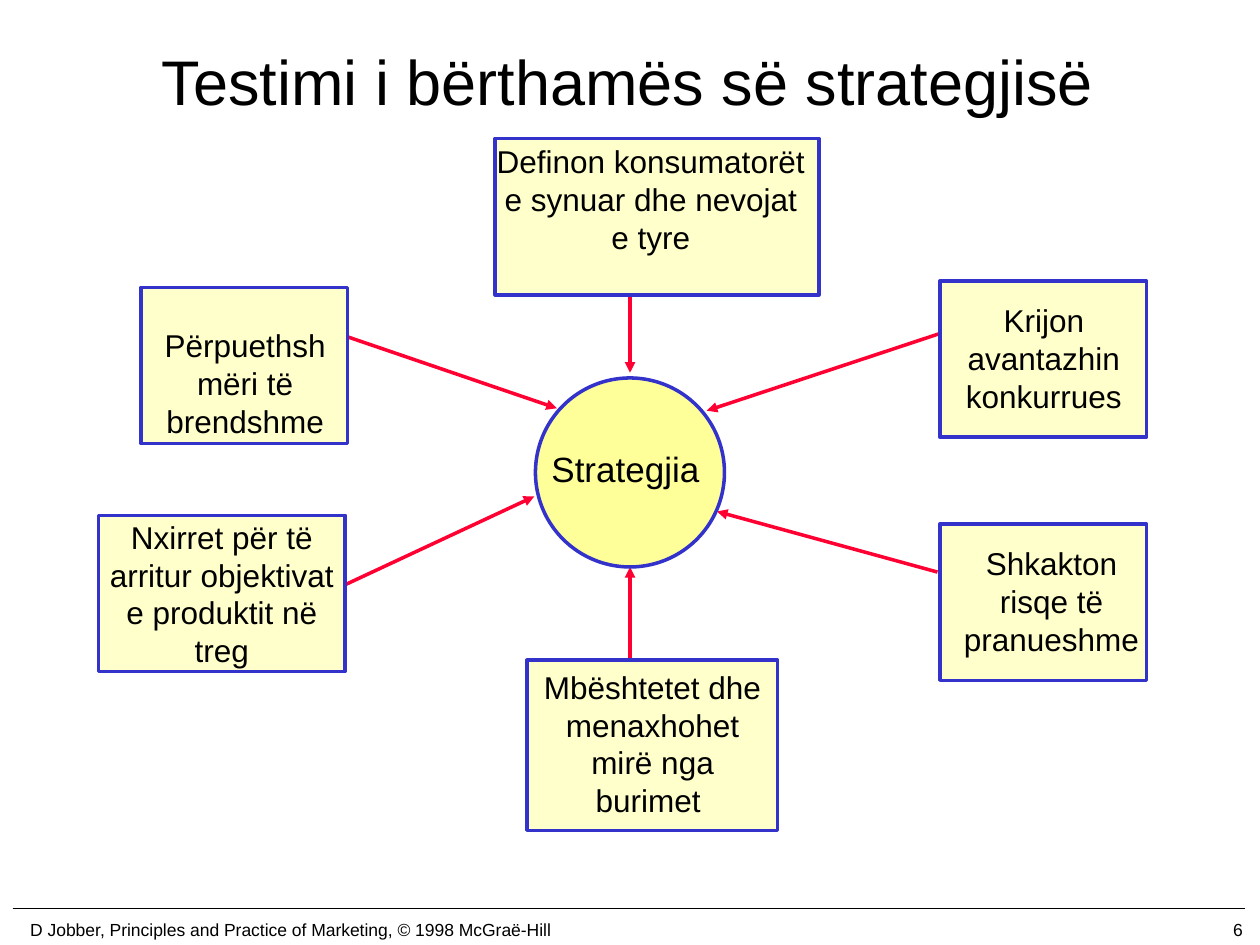
import pptx
import pptx.util
import pptx.dml.color
import pptx.enum.shapes
import pptx.enum.text
import pptx.oxml.ns
import lxml.etree

Pt = pptx.util.Pt
ALIGN = pptx.enum.text.PP_ALIGN
ANCHOR = pptx.enum.text.MSO_ANCHOR
SHAPE = pptx.enum.shapes.MSO_SHAPE

COLORS = {
    "text": "000000",
    "arrow": "FF0033",
    "border": "3333CC",
    "test": "FFFFCC",
    "strategy": "FFFF99",
}
FONT = "Arial"
TITLE = "Testimi i bërthamës së strategjisë"
FOOTER = "D Jobber, Principles and Practice of Marketing, © 1998 McGraë-Hill"
PAGE_NUMBER = "6"

TESTS = [
    {"text": "Definon konsumatorët e synuar dhe nevojat e tyre",
     "box": (283, 79.2, 185, 89.3), "label": (275.8, 77.8, 192.2, 72.7),
     "arrow": (360, 169, 360, 213)},
    {"text": "Mbështetet dhe menaxhohet mirë nga burimet ",
     "box": (301, 377.3, 143.3, 97.2), "label": (300.2, 378, 145.4, 94.3),
     "arrow": (360, 406, 360, 324)},
    {"text": "Përpuethshmëri të brendshme",
     "box": (80.6, 164.2, 118.1, 89.3), "label": (85, 182.9, 110.2, 72.7),
     "arrow": (193.7, 190.8, 318.2, 233.3)},
    {"text": "Nxirret për të arritur objektivat e produktit në treg",
     "box": (56.2, 294.5, 141.1, 89.3), "label": (52.6, 292.3, 148.3, 94.3),
     "arrow": (195.8, 334.8, 305.3, 283.7)},
    {"text": "Krijon avantazhin konkurrues",
     "box": (537.1, 160.6, 118.1, 89.3), "label": (541.4, 168.5, 110.2, 72.7),
     "arrow": (536.4, 190.8, 403.9, 234.7)},
    {"text": "Shkakton risqe të pranueshme",
     "box": (537.1, 299.5, 118.1, 89.3), "label": (535.7, 307.4, 130.3, 72.7),
     "arrow": (535.7, 326.9, 409.7, 292.3)},
]
STRATEGY = {"text": "Strategjia", "box": (306, 216, 108, 108),
            "label": (300.2, 252, 114.5, 31)}


def color(name):
    return pptx.dml.color.RGBColor.from_string(COLORS[name])


def add_line(slide, ends, color_name, width, arrow=False):
    connector = slide.shapes.add_connector(
        pptx.enum.shapes.MSO_CONNECTOR.STRAIGHT, *map(Pt, ends))
    connector.line.color.rgb = color(color_name)
    connector.line.width = Pt(width)
    if arrow:
        lxml.etree.SubElement(connector.line._get_or_add_ln(),
                              pptx.oxml.ns.qn("a:tailEnd"), type="triangle")
    lxml.etree.SubElement(connector._element.spPr, pptx.oxml.ns.qn("a:effectLst"))


def add_outlined(slide, kind, frame, fill):
    shape = slide.shapes.add_shape(kind, *map(Pt, frame))
    shape.shadow.inherit = False
    shape.fill.solid()
    shape.fill.fore_color.rgb = color(fill)
    shape.line.color.rgb = color("border")
    shape.line.width = Pt(2)


def add_text(slide, text, frame, size, align=ALIGN.CENTER, anchor=ANCHOR.TOP):
    text_frame = slide.shapes.add_textbox(*map(Pt, frame)).text_frame
    text_frame.word_wrap = True
    text_frame.vertical_anchor = anchor
    paragraph = text_frame.paragraphs[0]
    paragraph.alignment = align
    run = paragraph.add_run()
    run.text = text
    run.font.name = FONT
    run.font.size = Pt(size)
    run.font.color.rgb = color("text")


def main():
    presentation = pptx.Presentation()
    presentation.slide_width = Pt(720)
    presentation.slide_height = Pt(540)
    slide = presentation.slides.add_slide(presentation.slide_layouts[6])

    add_line(slide, (7.2, 519.1, 711.4, 519.1), "text", 1)
    add_text(slide, PAGE_NUMBER, (567.4, 522, 149.8, 18), 10, ALIGN.RIGHT, ANCHOR.MIDDLE)
    add_text(slide, FOOTER, (0, 522, 332, 18), 10, anchor=ANCHOR.MIDDLE)
    add_text(slide, TITLE, (52.6, 0.7, 612, 90), 36, anchor=ANCHOR.MIDDLE)

    for test in TESTS:
        add_line(slide, test["arrow"], "arrow", 2, arrow=True)
    for test in TESTS:
        add_outlined(slide, SHAPE.RECTANGLE, test["box"], "test")
        add_text(slide, test["text"], test["label"], 18)
    add_outlined(slide, SHAPE.OVAL, STRATEGY["box"], "strategy")
    add_text(slide, STRATEGY["text"], STRATEGY["label"], 20)

    presentation.save("out.pptx")


if __name__ == "__main__":
    main()
